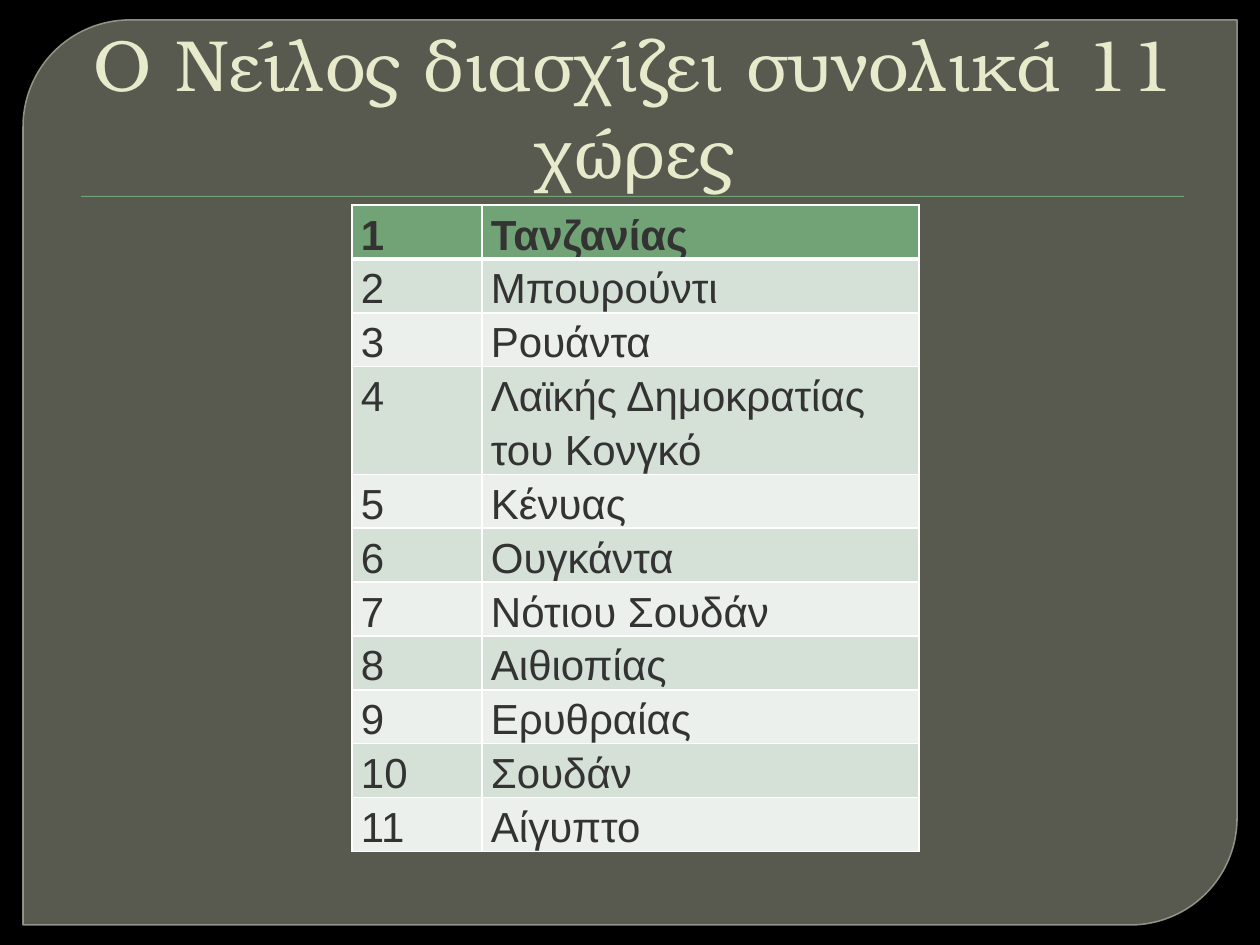
from lxml import etree
from pptx import Presentation
from pptx.dml.color import RGBColor
from pptx.enum.shapes import MSO_SHAPE
from pptx.enum.text import MSO_ANCHOR, MSO_AUTO_SIZE, PP_ALIGN
from pptx.oxml.ns import qn
from pptx.util import Pt

PX = 914400 / 126
ROUND_DIAGONAL = MSO_SHAPE.ROUND_2_DIAG_RECTANGLE
RECTANGLE = MSO_SHAPE.RECTANGLE
BOTTOM = MSO_ANCHOR.BOTTOM
NO_AUTOFIT = MSO_AUTO_SIZE.NONE
LEFT, CENTER = PP_ALIGN.LEFT, PP_ALIGN.CENTER

COLORS = {
    "background": "000000",
    "panel": "888B7B",
    "panel_line": "9DA090",
    "green": "72A376",
    "title": "E7EACB",
    "text": "333333",
    "border": "FFFFFF",
    "dark_band": "D5E0D6",
    "light_band": "EBF0EC",
}
RGB = {name: RGBColor.from_string(value) for name, value in COLORS.items()}

COUNTRIES = [
    "Τανζανίας", "Μπουρούντι", "Ρουάντα", "Λαϊκής Δημοκρατίας του Κονγκό",
    "Κένυας", "Ουγκάντα", "Νότιου Σουδάν", "Αιθιοπίας", "Ερυθραίας",
    "Σουδάν", "Αίγυπτο",
]


def px(*lengths):
    return [round(length * PX) for length in lengths]


def write(frame, text, size, font, color, bold=False, align=LEFT,
          spacing=1.0, margin=0, indent=0):
    paragraph = frame.paragraphs[0]
    paragraph.alignment = align
    paragraph.line_spacing = spacing
    properties = paragraph._p.get_or_add_pPr()
    properties.set("marL", str(round(margin * PX)))
    properties.set("indent", str(round(indent * PX)))
    run = paragraph.add_run()
    run.text = text
    run.font.size = Pt(size)
    run.font.name = font
    run.font.bold = bold
    run.font.color.rgb = RGB[color]


prs = Presentation()
prs.slide_width, prs.slide_height = px(1260, 945)
slide = prs.slides.add_slide(prs.slide_layouts[5])
slide.background.fill.solid()
slide.background.fill.fore_color.rgb = RGB["background"]

panel = slide.shapes.add_shape(ROUND_DIAGONAL, *px(23, 20, 1214, 905))
panel.adjustments[0] = 0.118
panel.adjustments[1] = 0
panel.shadow.inherit = False
panel.fill.solid()
panel.fill.fore_color.rgb = RGB["panel"]
panel.line.color.rgb = RGB["panel_line"]
panel.line.width = Pt(0.87)
for color, opacity in zip(panel.element.iter(qn("a:srgbClr")), (65, 88)):
    etree.SubElement(color, qn("a:alpha"), val=str(opacity * 1000))

rule = slide.shapes.add_shape(RECTANGLE, *px(81, 196, 1103, 1))
rule.shadow.inherit = False
rule.fill.solid()
rule.fill.fore_color.rgb = RGB["green"]
rule.line.fill.background()
effects = rule.element.spPr.find(qn("a:effectLst"))
shadow = etree.SubElement(effects, qn("a:outerShdw"), blurRad="12700",
                          dist="12700", dir="5400000")
shade = etree.SubElement(shadow, qn("a:srgbClr"), val=COLORS["background"])
etree.SubElement(shade, qn("a:alpha"), val="75000")

title = slide.shapes.title
slide.shapes.element.append(title.element)
title.left, title.top, title.width, title.height = px(63, 35, 1134, 158)
title.text_frame.auto_size = NO_AUTOFIT
title.text_frame.word_wrap = True
title.text_frame.vertical_anchor = BOTTOM
title.text_frame.margin_bottom = 0
write(title.text_frame, "Ο Νείλος διασχίζει συνολικά 11 χώρες", size=41.4,
      font="TeX Gyre Bonum", color="title", align=CENTER, margin=8)

row_height = 52
table = slide.shapes.add_table(
    len(COUNTRIES), 2, *px(352, 205, 567, row_height * len(COUNTRIES))).table
table.columns[0].width, table.columns[1].width = px(130, 437)

for row, country in enumerate(COUNTRIES):
    band = "green" if row == 0 else "dark_band" if row % 2 else "light_band"
    for column, text in enumerate((str(row + 1), country)):
        cell = table.cell(row, column)
        cell.margin_left, cell.margin_right = px(9, 9)
        cell.margin_top = cell.margin_bottom = 0
        hanging = 48 if column == 0 else 0
        write(cell.text_frame, text, size=24, font="Arial", color="text",
              bold=row == 0, spacing=1.15, margin=hanging, indent=-hanging)
        cell.fill.solid()
        cell.fill.fore_color.rgb = RGB[band]
        widths = {"lnL": 1, "lnR": 1, "lnT": 3 if row == 1 else 1,
                  "lnB": 3 if row == 0 else 1}
        for position, (side, width) in enumerate(widths.items()):
            border = etree.Element(qn(f"a:{side}"), w=str(Pt(width)))
            fill = etree.SubElement(border, qn("a:solidFill"))
            etree.SubElement(fill, qn("a:srgbClr"), val=COLORS["border"])
            cell._tc.get_or_add_tcPr().insert(position, border)

prs.save("out.pptx")
